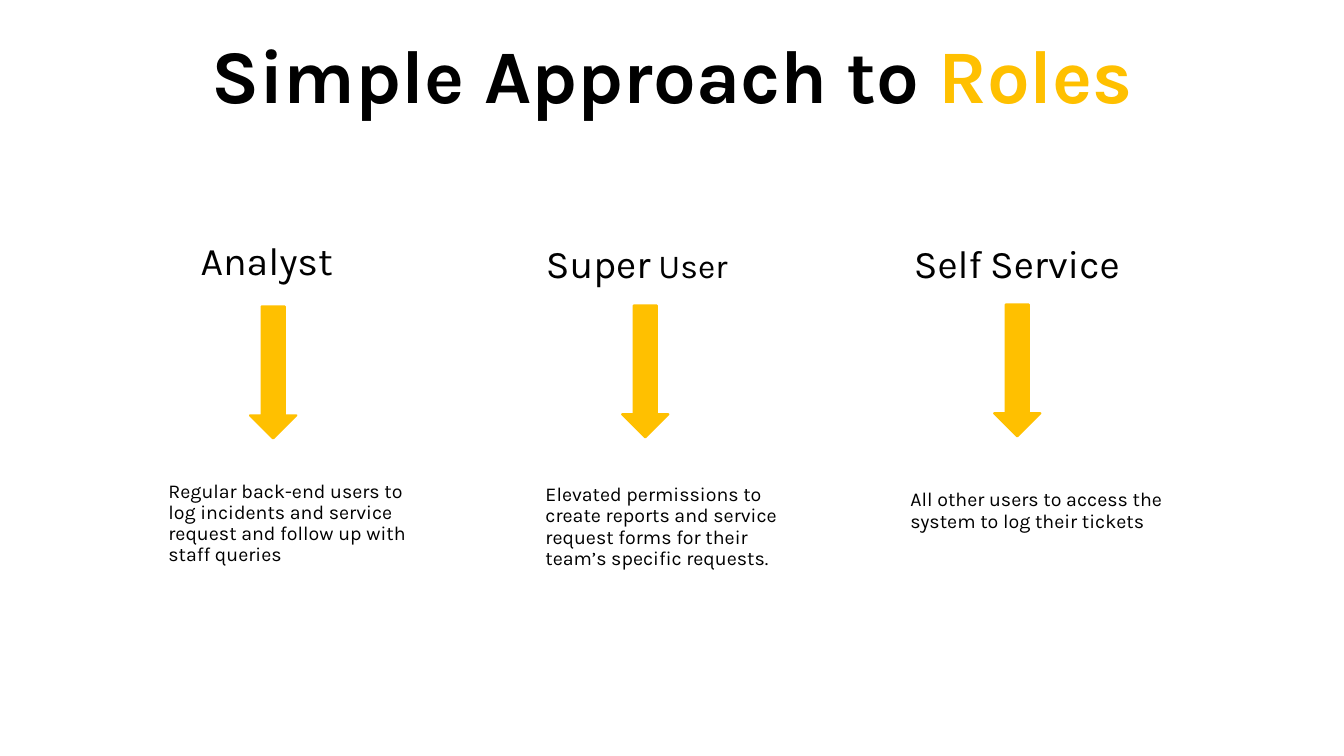
from dataclasses import dataclass

from pptx import Presentation
from pptx import util as u
from pptx.dml.color import RGBColor
from pptx.enum import shapes, text

BLACK = RGBColor(0x00, 0x00, 0x00)
AMBER = RGBColor(0xFF, 0xC0, 0x00)
FONT = "Karla"
INSET = 0.04


@dataclass
class Run:
    text: str
    size: int
    color: RGBColor = BLACK
    bold: bool = False


@dataclass
class Box:
    left: float
    top: float
    width: float
    height: float


@dataclass
class Role:
    name: list[Run]
    name_box: Box
    description: str
    description_box: Box
    bottom_inset: float = INSET


ROLES = [
    Role([Run("Analyst", 28)], Box(1.5, 1.75, 2.29, 1.72),
         "Regular back-end users to log incidents and service request "
         "and follow up with staff queries", Box(1.63, 4.43, 2.65, 1.53)),
    Role([Run("Super", 28), Run(" User", 24)], Box(5.24, 1.85, 2.15, 1.57),
         "Elevated permissions to create reports and service request forms "
         "for their team’s specific requests.", Box(5.37, 4.51, 2.65, 1.44)),
    Role([Run("Self", 28), Run(" ", 24), Run("Service", 28)], Box(9.01, 1.85, 2.15, 1.57),
         "All other users to access the system to log their tickets",
         Box(8.99, 4.47, 2.77, 1.42), bottom_inset=0.26),
]


def place(shape, box: Box) -> None:
    shape.left, shape.top = u.Inches(box.left), u.Inches(box.top)
    shape.width, shape.height = u.Inches(box.width), u.Inches(box.height)


def write(shape, runs: list[Run], alignment: text.PP_ALIGN,
          bottom_inset: float = INSET) -> None:
    frame = shape.text_frame
    frame.word_wrap = True
    frame.auto_size = text.MSO_AUTO_SIZE.NONE
    frame.vertical_anchor = text.MSO_ANCHOR.MIDDLE
    frame.margin_left = frame.margin_right = frame.margin_top = u.Inches(INSET)
    frame.margin_bottom = u.Inches(bottom_inset)
    paragraph = frame.paragraphs[0]
    paragraph.alignment = alignment
    paragraph.line_spacing = 0.9
    paragraph.space_before = u.Pt(0)
    for item in runs:
        run = paragraph.add_run()
        run.text = item.text
        run.font.name = FONT
        run.font.size = u.Pt(item.size)
        run.font.bold = item.bold
        run.font.color.rgb = item.color


def add_text(slide, box: Box, runs: list[Run], alignment: text.PP_ALIGN,
             bottom_inset: float = INSET) -> None:
    shape = slide.shapes.add_textbox(0, 0, 0, 0)
    place(shape, box)
    write(shape, runs, alignment, bottom_inset)


def add_arrow(slide, box: Box) -> None:
    arrow = slide.shapes.add_shape(shapes.MSO_SHAPE.DOWN_ARROW, 0, 0, 0, 0)
    place(arrow, box)
    arrow.shadow.inherit = False
    arrow.fill.solid()
    arrow.fill.fore_color.rgb = AMBER
    arrow.line.color.rgb = AMBER
    arrow.line.width = u.Pt(1.5)


def main() -> None:
    presentation = Presentation()
    presentation.slide_width = u.Inches(13.33)
    presentation.slide_height = u.Inches(7.5)
    slide = presentation.slides.add_slide(presentation.slide_layouts[5])

    # Title
    title = slide.shapes.title
    place(title, Box(0, 0.35, 13.33, 0.87))
    write(title, [Run("Simple Approach to ", 54, bold=True),
                  Run("Roles", 54, AMBER, bold=True)], text.PP_ALIGN.CENTER)

    # One column per role: name, arrow, description
    for index, role in enumerate(ROLES):
        add_text(slide, role.name_box, role.name, text.PP_ALIGN.CENTER)
        add_arrow(slide, Box(2.48 + 3.69 * index, 3.04 - 0.01 * index, 0.46, 1.31))
        add_text(slide, role.description_box, [Run(role.description, 14)],
                 text.PP_ALIGN.LEFT, role.bottom_inset)

    presentation.save("out.pptx")


if __name__ == "__main__":
    main()
